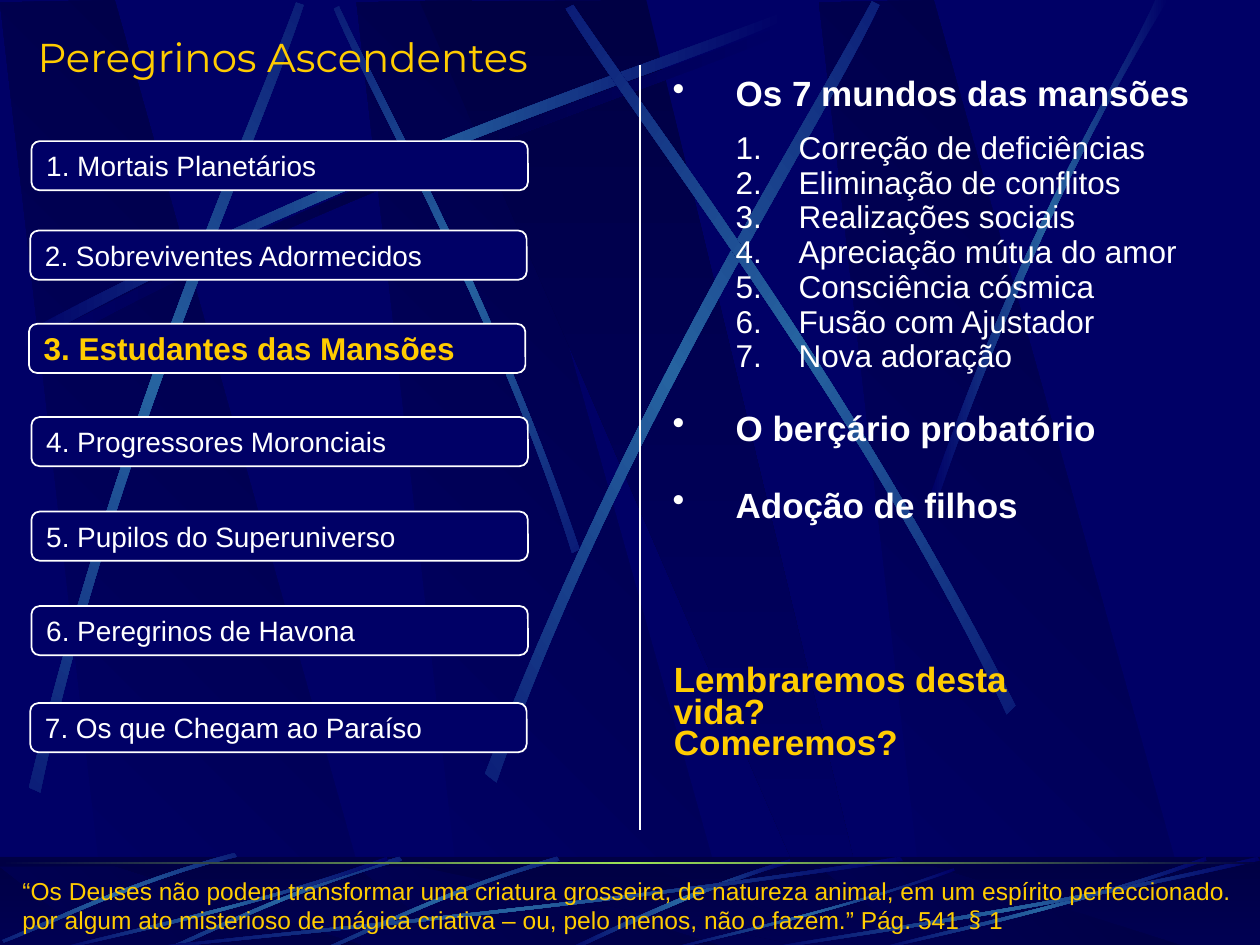
import math

import lxml.etree
import pptx
import pptx.dml.color
import pptx.enum.shapes
import pptx.enum.text
import pptx.oxml.ns
import pptx.util

UNIT = 9144  # EMU per px, 100 px to the inch
SIZE = (1000, 750)
HUES = {"back": "000066", "deep": "000044", "beam": "2663A0", "glow": "9CE157",
        "gold": "FFCC00", "white": "FFFFFF"}
FADE = ("back", "beam", "back")
DIM = ("back", "deep", "back")

SLABS = (283, 0, 650)
# Outline and wedge for the whole slide, then for the strip at its foot
SHEETS = ([(86, 750), (302, 752), (91, 0), (0, 2)],
          [(333, 1), (658, 751), (694, 751), (513, 0)])
STRIP = ([(86, 755), (302, 755), (91, 688), (0, 688)],
         [(333, 688), (658, 755), (694, 755), (513, 688)])

# Colours, turn, then start, curve, corner, curve back
BEAMS = [
    (DIM, 0, [(20, 275), (284, 134), (524, 59), (626, 18), (629, 24), (528, 69), (254, 151), (23, 285)]),
    (FADE, 45, [(460, 436), (391, 234), (302, 77), (269, 5), (265, 7), (295, 79), (398, 258), (454, 439)]),
    (FADE, 0, [(14, 267), (278, 125), (518, 51), (620, 10), (623, 16), (522, 61), (248, 143), (17, 277)]),
    (FADE, 311.7, [(23, 625), (93, 334), (197, 105), (235, 2), (241, 4), (207, 109), (86, 368), (32, 629)]),
    (FADE, 321.6, [(385, 614), (498, 320), (638, 102), (692, 1), (698, 4), (649, 108), (486, 355), (394, 621)]),
    (FADE, 34.7, [(806, 560), (670, 293), (516, 95), (455, 4), (449, 7), (507, 101), (685, 325), (799, 567)]),
    (FADE, 0, [(738, 394), (814, 173), (888, 66), (917, 0), (927, 0), (836, 145), (769, 322), (744, 397)]),
]
RAYS = [
    (FADE, 0, [(627, 682), (537, 709), (477, 742), (448, 754), (453, 755), (490, 738), (571, 700), (628, 685)]),
    (FADE, 315, [(442, 680), (355, 705), (287, 740), (256, 753), (257, 755), (288, 743), (365, 703), (444, 683)]),
    (FADE, 315, [(317, 680), (230, 705), (162, 740), (131, 753), (132, 755), (163, 743), (240, 703), (319, 683)]),
    (FADE, 315, [(186, 677), (99, 700), (33, 734), (2, 746), (3, 748), (34, 737), (110, 698), (188, 680)]),
    (FADE, 0, [(717, 683), (449, 723), (206, 744), (103, 755), (100, 754), (202, 741), (480, 718), (714, 680)]),
    (FADE, 0, [(308, 683), (193, 723), (88, 744), (43, 755), (42, 754), (86, 741), (206, 718), (307, 680)]),
    (FADE, 0, [(758, 691), (658, 726), (567, 745), (528, 755), (527, 754), (565, 743), (669, 722), (757, 689)]),
    (FADE, 0, [(958, 683), (843, 723), (738, 744), (693, 755), (692, 754), (736, 741), (856, 718), (957, 680)]),
    (FADE, 0, [(1000, 683), (827, 723), (669, 744), (602, 755), (600, 754), (666, 741), (846, 718), (998, 680)]),
]

TITLE = "Peregrinos Ascendentes"
STAGES = [(25, 112, "1. Mortais Planetários"), (24, 183, "2. Sobreviventes Adormecidos"),
          (23, 257, "3. Estudantes das Mansões"), (25, 331, "4. Progressores Moronciais"),
          (25, 406, "5. Pupilos do Superuniverso"), (25, 481, "6. Peregrinos de Havona"),
          (24, 558, "7. Os que Chegam ao Paraíso")]
ACTIVE = 2
# Heading, space before in points, numbered items
TOPICS = [
    ("Os 7 mundos das mansões", 0,
     ["Correção de deficiências", "Eliminação de conflitos", "Realizações sociais",
      "Apreciação mútua do amor", "Consciência cósmica", "Fusão com Ajustador", "Nova adoração"]),
    ("O berçário probatório", 18.3, []),
    ("Adoção de filhos", 20, []),
]
ASKS = [(525, 340, "Lembraremos desta vida?"), (575, 198, "Comeremos?")]
QUOTE = [("“Os Deuses não podem transformar uma criatura grosseira, de natureza animal, em um "
          "espírito perfeccionado. por algum ato misterioso de mágica criativa – ou, pelo menos, "
          "não o fazem.” Pág. 541 ", "Arial"), ("§", "Noto Sans Mono"), (" 1", "Arial")]

SHAPE = pptx.enum.shapes.MSO_SHAPE
ANCHOR = pptx.enum.text.MSO_ANCHOR
Pt = pptx.util.Pt

deck = pptx.Presentation()
deck.slide_width, deck.slide_height = (n * UNIT for n in SIZE)
slide = deck.slides.add_slide(deck.slide_layouts[6])


def tint(name):
    return pptx.dml.color.RGBColor.from_string(HUES[name])


def node(parent, tag, **attrs):
    child = lxml.etree.SubElement(parent, pptx.oxml.ns.qn("a:" + tag))
    for key, value in attrs.items():
        child.set(key, str(value))
    return child


def blend(shape, names, angle):
    """Fill with evenly spaced colour stops, angle clockwise."""
    shape.shadow.inherit = False
    shape.line.fill.background()
    shape.fill.gradient()
    grad = shape._element.spPr.find(pptx.oxml.ns.qn("a:gradFill"))
    for child in list(grad):
        grad.remove(child)
    stops = node(grad, "gsLst")
    for i, name in enumerate(names):
        stop = node(stops, "gs", pos=i * 100000 // (len(names) - 1))
        node(stop, "srgbClr", val=HUES[name])
    node(grad, "lin", ang=angle * 60000, scaled=0)


def spin(point, turn):
    x, y = point
    a = math.radians(turn)
    return x * math.cos(a) - y * math.sin(a), x * math.sin(a) + y * math.cos(a)


def bend(shape):
    """Turn the first and last three line segments into one curve each."""
    lines = list(shape._element.iter(pptx.oxml.ns.qn("a:lnTo")))
    for trio in (lines[:3], lines[4:7]):
        arc = node(trio[0].getparent(), "cubicBezTo")
        trio[0].addprevious(arc)
        for line in trio:
            arc.append(line[0])
            line.getparent().remove(line)


def outline(points, names, angle, turn=0):
    """Draw points as they lie on the slide, held by a shape turned by turn degrees."""
    flat = [tuple(round(n * UNIT) for n in spin(p, -turn)) for p in points]
    pen = slide.shapes.build_freeform(*flat[0], scale=1.0)
    pen.add_line_segments(flat[1:], close=True)
    shape = pen.convert_to_shape()
    x, y = spin((shape.left + shape.width / 2, shape.top + shape.height / 2), turn)
    shape.left, shape.top = round(x - shape.width / 2), round(y - shape.height / 2)
    shape.rotation = turn
    blend(shape, names, angle)
    return shape


def sheet(slab, wedge):
    for shift in SLABS:
        outline([(x + shift, y) for x, y in slab], ("back", "deep"), 315)
    outline(wedge, ("deep", "back"), 90)


def shine(beams):
    for names, turn, points in beams:
        bend(outline(points, names, 0, turn))


def block(kind, *box):
    shape = slide.shapes.add_shape(kind, *(n * UNIT for n in box))
    shape.shadow.inherit = False
    return shape


def veil():
    shape = block(SHAPE.RECTANGLE, 0, 680, 1000, 75)
    shape.fill.solid()
    shape.fill.fore_color.rgb = tint("deep")
    shape.line.fill.background()
    hue = shape._element.spPr.find(".//" + pptx.oxml.ns.qn("a:srgbClr"))
    node(hue, "alpha", val=50000)


def write(para, text, size, hue, bold=False, face="Arial"):
    run = para.add_run()
    run.text = text
    run.font.size, run.font.bold, run.font.name = Pt(size), bold, face
    run.font.color.rgb = tint(hue)


def label(*box, wrap=True):
    frame = slide.shapes.add_textbox(*(n * UNIT for n in box)).text_frame
    frame.word_wrap = wrap
    return frame


def bullet(para, left, tag, **attrs):
    props = para._p.get_or_add_pPr()
    props.set("marL", str(left * UNIT))
    props.set("indent", str(-50 * UNIT))
    node(props, tag, **attrs)


# Backdrop
slide.background.fill.solid()
slide.background.fill.fore_color.rgb = tint("back")
sheet(*SHEETS)
shine(BEAMS)
blend(block(SHAPE.RECTANGLE, 0, 680, 1000, 75), ("deep", "back"), 90)
sheet(*STRIP)
veil()
shine(RAYS)
blend(block(SHAPE.RECTANGLE, 0, 684, 1000, 2), ("deep", "glow", "deep"), 0)

# Title, quote and divider
write(label(20, 21, 447, 48, wrap=False).paragraphs[0], TITLE, 23, "gold", face="Montserrat")
foot = label(8, 690, 992, 57)
foot.vertical_anchor = ANCHOR.MIDDLE
for text, face in QUOTE:
    write(foot.paragraphs[0], text, 14, "gold", face=face)
rule = slide.shapes.add_connector(pptx.enum.shapes.MSO_CONNECTOR.STRAIGHT,
                                  *(n * UNIT for n in (508, 52, 508, 659)))
rule.line.color.rgb, rule.line.width = tint("white"), Pt(1)
node(rule._element.spPr, "effectLst")

# Stages
for i, (x, y, text) in enumerate(STAGES):
    pill = block(SHAPE.FLOWCHART_ALTERNATE_PROCESS, x, y, 394, 39)
    pill.fill.solid()
    pill.fill.fore_color.rgb = tint("back")
    pill.line.color.rgb, pill.line.width = tint("white"), Pt(1)
    pill.text_frame.vertical_anchor = ANCHOR.MIDDLE
    para = pill.text_frame.paragraphs[0]
    para.alignment = pptx.enum.text.PP_ALIGN.LEFT
    write(para, text, *((18, "gold", True) if i == ACTIVE else (16, "white")))

# Topics
frame = label(524, 52, 453, 428)
for i, (head, gap, items) in enumerate(TOPICS):
    para = frame.add_paragraph() if i else frame.paragraphs[0]
    if i:
        para.space_before = Pt(gap)
    bullet(para, 50, "buChar", char="•")
    write(para, head, 20, "white", True)
    for j, item in enumerate(items):
        para = frame.add_paragraph()
        para.level = 1
        para.line_spacing, para.space_before = Pt(19.8), Pt(0 if j else 10)
        bullet(para, 100, "buAutoNum", type="arabicPeriod")
        write(para, item, 18, "white")

# Questions
for y, wide, text in ASKS:
    para = label(525, y, wide, 35).paragraphs[0]
    para.line_spacing = 0.75
    write(para, text, 20, "gold", True)

deck.save("out.pptx")
